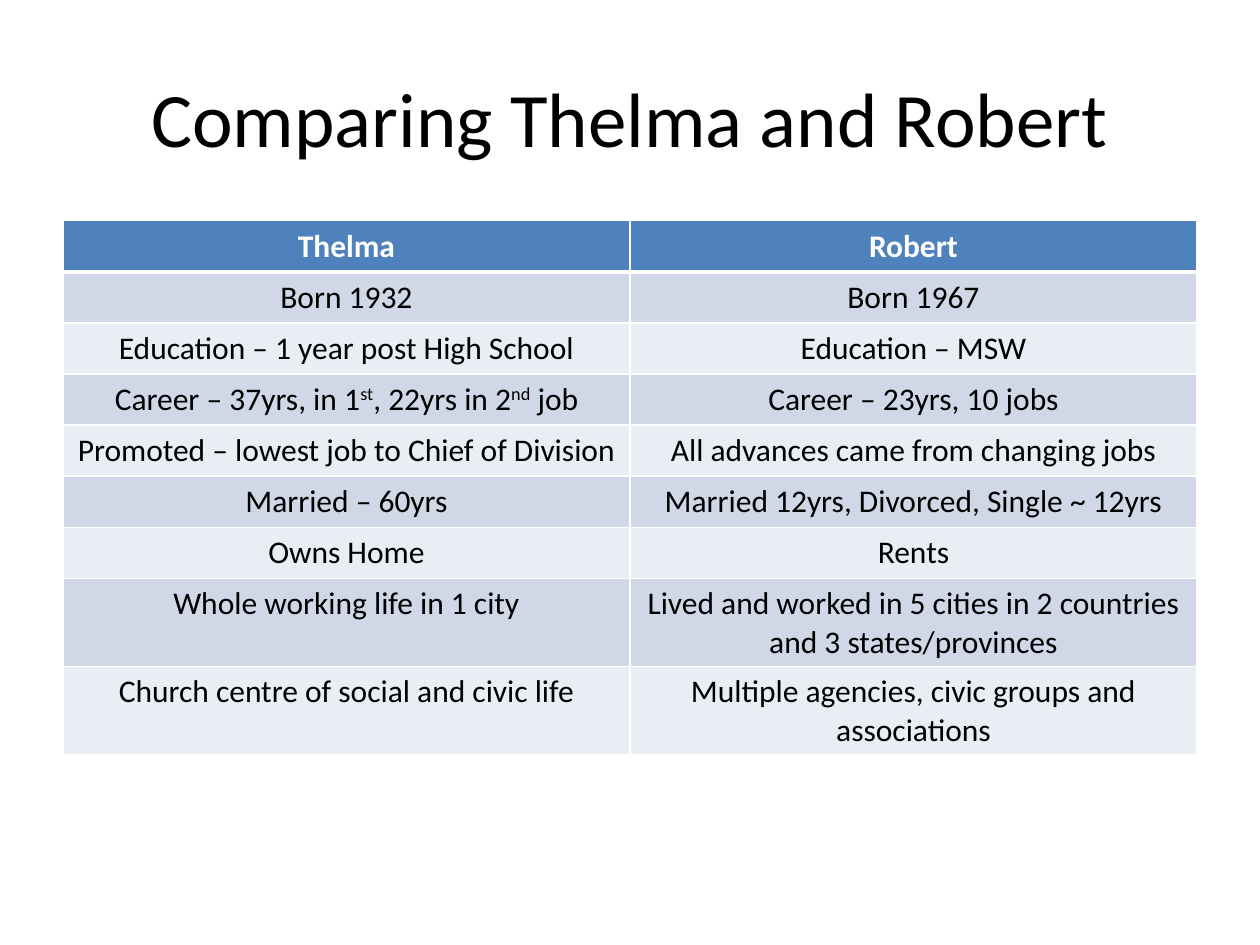
from lxml import etree
from pptx import Presentation
from pptx.dml.color import RGBColor
from pptx.enum import text
from pptx.oxml import ns
from pptx.util import Cm, Pt

# Content: a cell is a string, or a list of (text, raised) runs
TITLE = "Comparing Thelma and Robert"
ROWS = [
    ("Thelma", "Robert"),
    ("Born 1932", "Born 1967"),
    ("Education – 1 year post High School", "Education – MSW"),
    ([("Career – 37yrs, in 1", False), ("st", True), (", 22yrs in 2", False),
      ("nd", True), (" job", False)], "Career – 23yrs, 10 jobs"),
    ("Promoted – lowest job to Chief of Division",
     "All advances came from changing jobs"),
    ("Married – 60yrs", "Married 12yrs, Divorced, Single ~ 12yrs"),
    ("Owns Home", "Rents"),
    ("Whole working life in 1 city",
     "Lived and worked in 5 cities in 2 countries and 3 states/provinces"),
    ("Church centre of social and civic life",
     "Multiple agencies, civic groups and associations"),
]

FONT = "Calibri"
BLACK = RGBColor(0x00, 0x00, 0x00)
WHITE = RGBColor(0xFF, 0xFF, 0xFF)
BLUE = RGBColor(0x4F, 0x81, 0xBD)
BANDS = [RGBColor(0xE9, 0xED, 0xF4), RGBColor(0xD0, 0xD8, 0xE8)]

LEFT, WIDTH = Cm(1.27), Cm(22.86)
ROW = Cm(1.03)


def write(frame, runs, size, color, bold=False):
    par = frame.paragraphs[0]
    par.alignment = text.PP_ALIGN.CENTER
    for words, raised in runs:
        run = par.add_run()
        run.text = words
        font = run.font
        font.name, font.size, font.bold = FONT, Pt(size), bold
        font.color.rgb = color
        if raised:
            font._element.set("baseline", "30000")


def edge(cell, side, width):
    props = cell._tc.get_or_add_tcPr()
    line = etree.SubElement(props, ns.qn("a:ln" + side), w=str(Pt(width)))
    fill = etree.SubElement(line, ns.qn("a:solidFill"))
    etree.SubElement(fill, ns.qn("a:srgbClr"), val=str(WHITE))


deck = Presentation()
deck.slide_width, deck.slide_height = Cm(25.4), Cm(19.05)
slide = deck.slides.add_slide(deck.slide_layouts[6])

# Title
box = slide.shapes.add_textbox(LEFT, Cm(0.76), WIDTH, Cm(3.18))
frame = box.text_frame
frame.word_wrap = True
frame.vertical_anchor = text.MSO_ANCHOR.MIDDLE
write(frame, [(TITLE, False)], 44, BLACK)

# Table: header row, then alternating bands
table = slide.shapes.add_table(len(ROWS), len(ROWS[0]), LEFT, Cm(4.45),
                               WIDTH, ROW * len(ROWS)).table
for i, row in enumerate(ROWS):
    head = i == 0
    for j, item in enumerate(row):
        cell = table.cell(i, j)
        for side in "LRTB":
            thick = (head and side == "B") or (i == 1 and side == "T")
            edge(cell, side, 3 if thick else 1)
        cell.fill.solid()
        cell.fill.fore_color.rgb = BLUE if head else BANDS[i % 2]
        runs = [(item, False)] if isinstance(item, str) else item
        write(cell.text_frame, runs, 18, WHITE if head else BLACK, head)

deck.save("out.pptx")
